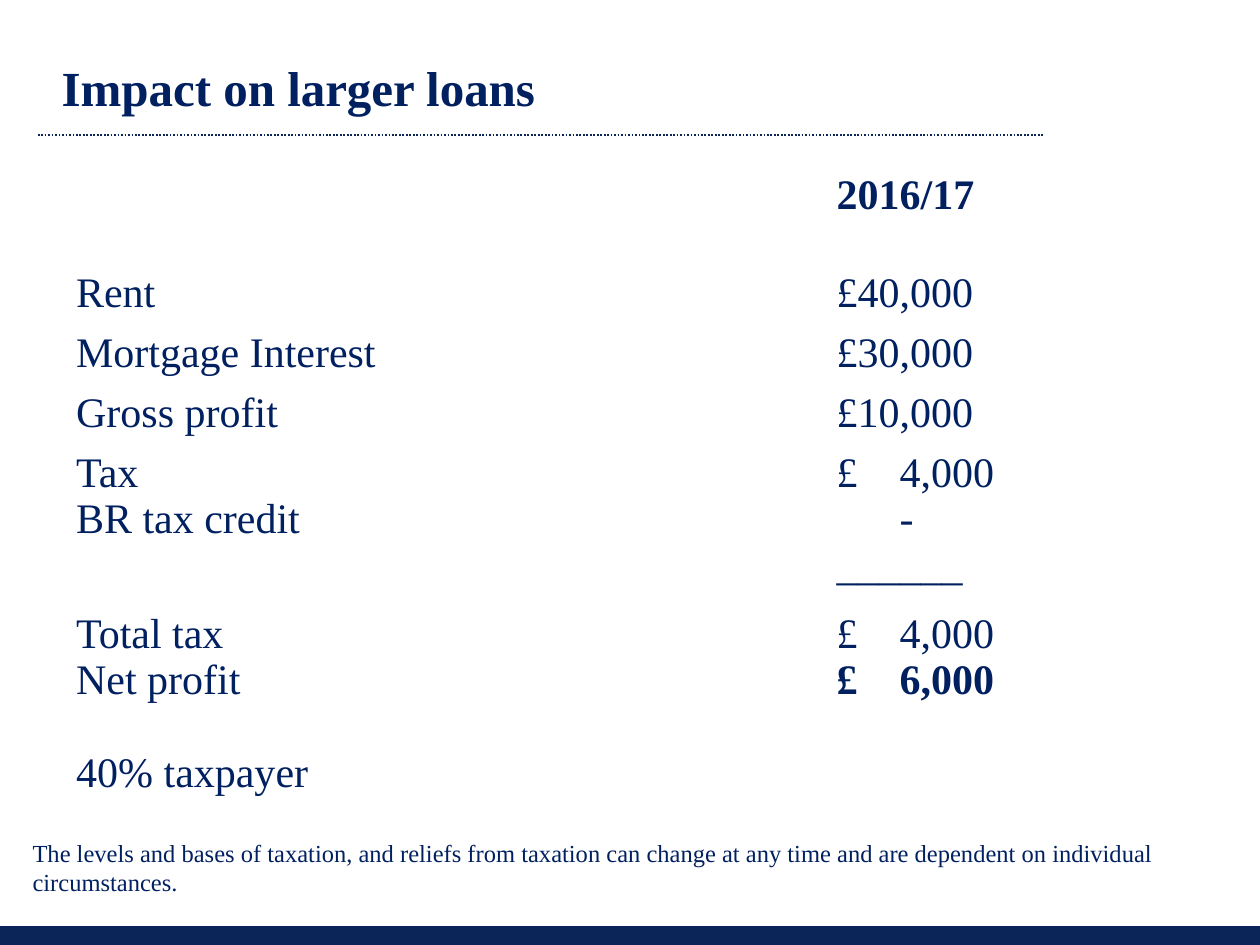
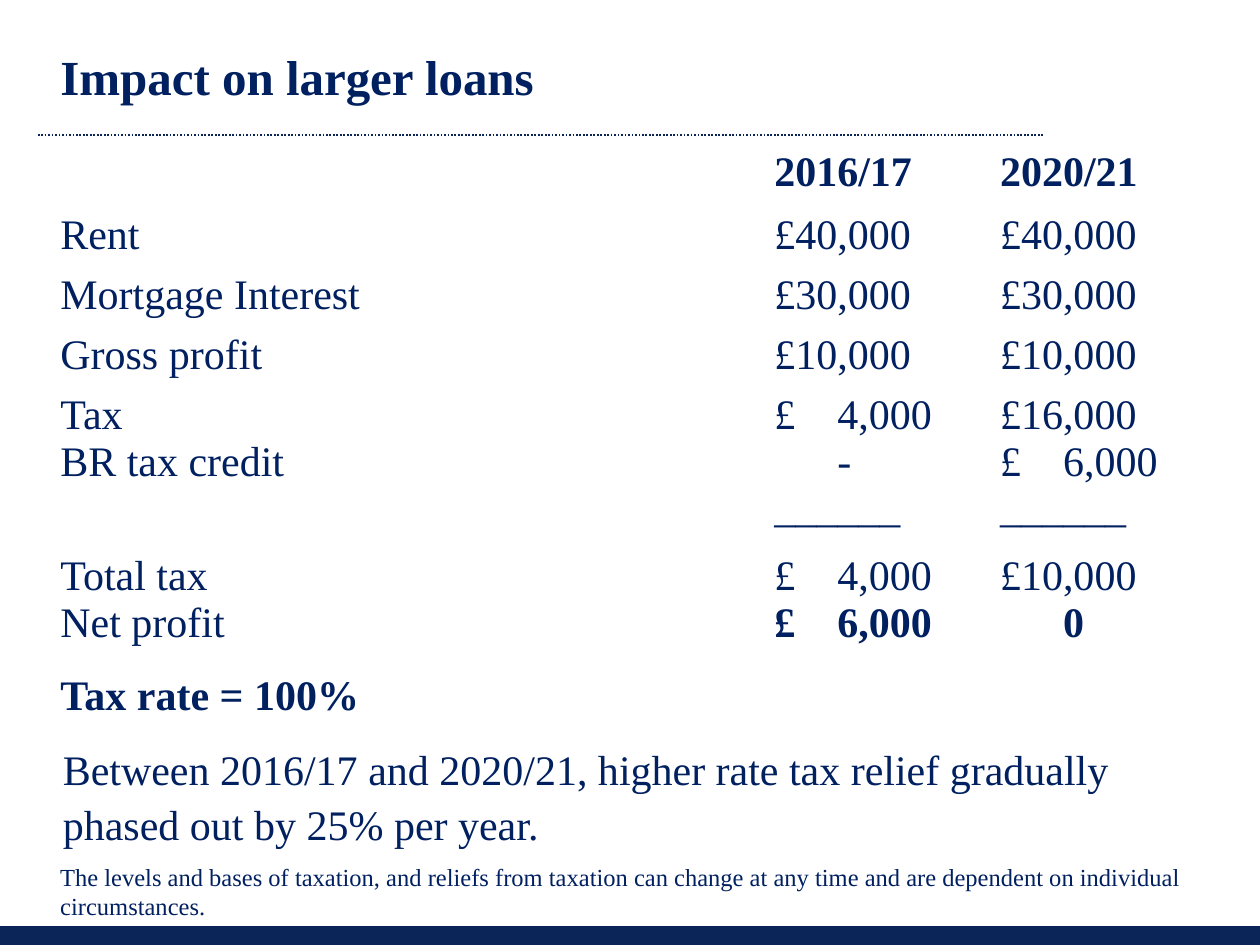
from lxml.etree import SubElement
from pptx import Presentation
from pptx.dml.color import RGBColor
from pptx.enum.dml import MSO_LINE
from pptx.enum.shapes import MSO_CONNECTOR as Connector, MSO_SHAPE as Shape
from pptx.enum.text import MSO_ANCHOR as Anchor, PP_ALIGN as Align
from pptx.oxml.ns import qn
from pptx.util import Pt

FONT = "Times New Roman"
INK = "002060"
NAVY = "0B2559"
TITLE = "Impact on larger loans"
WARNING = ("The levels and bases of taxation, and reliefs from taxation can change "
           "at any time and are dependent on individual circumstances.")
RELIEF = ("Between 2016/17 and 2020/21, higher rate tax relief gradually "
          "phased out by 25% per year.")


def color(value):
    return RGBColor.from_string(value)


def line(text, **style):
    """One line of a table cell, with its own format."""
    return text, style


def pounds(amount, **style):
    """A short amount, its digits lined up under the longer ones."""
    return line(f"£\t{amount}", tab=24, **style)


def write(para, text, size=24, bold=False, indent=0, tab=None, before=0, spacing=None):
    props = para._p.get_or_add_pPr()
    props.set("marL", str(Pt(indent)))
    props.set("indent", "0")
    if tab:
        stops = SubElement(props, qn("a:tabLst"))
        SubElement(stops, qn("a:tab"), pos=str(Pt(tab)), algn="l")
    para.alignment = Align.LEFT
    para.space_before = Pt(before)
    if spacing:
        para.line_spacing = spacing
    span = para.add_run()
    span.text = text
    span.font.name = FONT
    span.font.size = Pt(size)
    span.font.bold = bold
    span.font.color.rgb = color(INK)


# Table columns: a heading, then one cell per row, each a list of lines
SUM_LINE = line("______")
LABELS = [[], [line("Rent")], [line("Mortgage Interest")], [line("Gross profit")],
          [line("Tax"), line("BR tax credit")]]
TOTALS = [line("Total tax"), line("Net profit")]
YEAR_2016 = [[line("2016/17", bold=True)], [line("£40,000")], [line("£30,000")],
             [line("£10,000")], [pounds("4,000"), line("-", indent=36), SUM_LINE],
             [pounds("4,000"), pounds("6,000", bold=True)]]
YEAR_2020 = [[line("2020/21", bold=True)], [line("£40,000")], [line("£30,000")],
             [line("£10,000")], [line("£16,000"), pounds("6,000"), SUM_LINE],
             [line("£10,000"), line("0", indent=36, bold=True)]]


class LoanDeck:
    def __init__(self):
        self.deck = Presentation()
        self.deck.slide_width, self.deck.slide_height = Pt(720), Pt(540)
        self.page = None

    def new_page(self, left, top):
        self.page = self.deck.slides.add_slide(self.deck.slide_layouts[5])
        self.band()
        self.dotted_rule()
        self.title(left, top)

    def band(self):
        box = self.page.shapes.add_shape(Shape.RECTANGLE, 0, Pt(529.2), Pt(720), Pt(10.8))
        box.shadow.inherit = False
        box.fill.solid()
        box.fill.fore_color.rgb = color(NAVY)
        box.line.fill.background()

    def dotted_rule(self):
        rule = self.page.shapes.add_connector(
            Connector.STRAIGHT, Pt(21.6), Pt(77), Pt(597), Pt(77))
        rule.line.color.rgb = color(NAVY)
        rule.line.width = Pt(1)
        rule.line.dash_style = MSO_LINE.ROUND_DOT
        SubElement(rule._element.spPr, qn("a:effectLst"))

    def title(self, left, top):
        box = self.page.shapes.title
        box.left, box.top, box.width, box.height = Pt(left), Pt(top), Pt(291), Pt(75)
        box.text_frame.word_wrap = False
        box.text_frame.vertical_anchor = Anchor.TOP
        write(box.text_frame.paragraphs[0], TITLE, size=28, bold=True)

    def text(self, content, left, top, height, **style):
        box = self.page.shapes.add_textbox(Pt(left), Pt(top), Pt(674), Pt(height))
        box.text_frame.word_wrap = True
        write(box.text_frame.paragraphs[0], content, **style)

    def table(self, columns, left, top, widths, heights):
        table = self.page.shapes.add_table(
            len(heights), len(widths), Pt(left), Pt(top),
            Pt(sum(widths)), Pt(sum(heights))).table
        table.first_row = table.horz_banding = False
        for column, width in zip(table.columns, widths):
            column.width = Pt(width)
        for row, height in zip(table.rows, heights):
            row.height = Pt(height)
        for cell in table.iter_cells():
            cell.fill.background()
            cell.margin_left = cell.margin_right = Pt(6)
            cell.margin_top = cell.margin_bottom = Pt(3.3)
        for x, column in columns.items():
            for y, lines in enumerate(column):
                frame = table.cell(y, x).text_frame
                for number, (content, style) in enumerate(lines):
                    para = frame.add_paragraph() if number else frame.paragraphs[0]
                    write(para, content, **style)


def main():
    loans = LoanDeck()

    # One tax year
    loans.new_page(28, 29.5)
    taxpayer = line("40% taxpayer", before=26.6)
    loans.table({0: LABELS + [TOTALS + [taxpayer]], 2: YEAR_2016},
                37.5, 95, [269, 165.6, 119.5, 119.5], [56, 34.3, 34.3, 34.3, 92, 108])
    loans.text(WARNING, 11.5, 475.2, 40, size=14)

    # Two tax years compared
    loans.new_page(27.3, 23)
    tax_rate = line("Tax rate = 100%", bold=True, before=15.5)
    loans.table({0: LABELS + [TOTALS + [tax_rate]], 2: YEAR_2016, 3: YEAR_2020},
                28.5, 82, [268.5, 139.5, 129, 136], [36, 34.3, 34.3, 34.3, 92, 107])
    loans.text(RELIEF, 28.8, 418.3, 65.5, spacing=1.1)
    loans.text(WARNING, 27.3, 488.9, 40, size=14)

    loans.deck.save("out.pptx")


if __name__ == "__main__":
    main()
